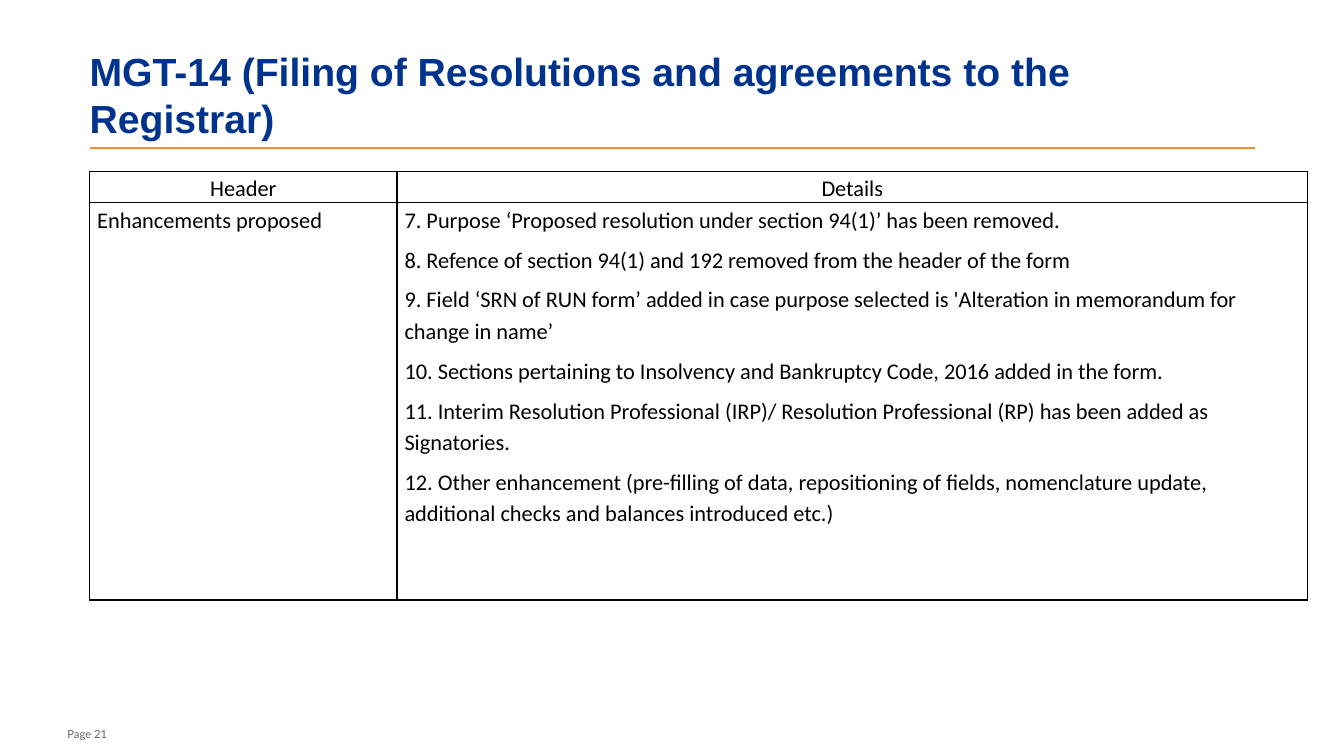
from lxml.etree import SubElement
from pptx import Presentation
from pptx.dml.color import RGBColor
from pptx.enum.shapes import MSO_CONNECTOR
from pptx.enum.text import MSO_ANCHOR, PP_ALIGN
from pptx.oxml.ns import qn
from pptx.util import Pt

COLORS = {
    "title": "00338D",
    "rule": "F68D2E",
    "text": "000000",
    "border": "000000",
    "page": "646464",
}

TITLE_FONT = {"name": "Arial", "size": Pt(28), "bold": True}
TABLE_FONT = {"name": "Calibri", "size": Pt(16), "bold": False}
PAGE_FONT = {"name": "Lato", "size": Pt(8), "bold": False}

LEFT = 64.1
COLUMN_WIDTHS = (219.6, 650.9)
ROW_HEIGHTS = (22.4, 283.8)

TABLE_ROWS = (
    (["Header"], ["Details"]),
    (
        ["Enhancements proposed"],
        [
            "7. Purpose ‘Proposed resolution under section 94(1)’ has been removed.",
            "8. Refence of section 94(1) and 192 removed from the header of the form",
            "9. Field ‘SRN of RUN form’ added in case purpose selected is "
            "'Alteration in memorandum for change in name’",
            "10. Sections pertaining to Insolvency and Bankruptcy Code, 2016 added in the form.",
            "11. Interim Resolution Professional (IRP)/ Resolution Professional (RP) "
            "has been added as Signatories.",
            "12. Other enhancement (pre-filling of data, repositioning of fields, "
            "nomenclature update, additional checks and balances introduced etc.)",
        ],
    ),
)


def apply_format(target, values):
    for name, value in values.items():
        setattr(target, name, value)


def format_font(font, values, color):
    apply_format(font, values)
    font.color.rgb = RGBColor.from_string(COLORS[color])


def add_label(slide, text, box, anchor, font_values, color):
    """Add a text box without margins; box is left, top, width, height in points."""
    label = slide.shapes.add_textbox(*map(Pt, box))
    frame = label.text_frame
    apply_format(frame, {
        "word_wrap": True,
        "vertical_anchor": anchor,
        "margin_left": 0,
        "margin_right": 0,
        "margin_top": 0,
        "margin_bottom": 0,
    })
    paragraph = frame.paragraphs[0]
    paragraph.text = text
    format_font(paragraph.font, font_values, color)


def add_title_rule(slide):
    rule = slide.shapes.add_connector(
        MSO_CONNECTOR.STRAIGHT, Pt(LEFT), Pt(105.8), Pt(897.1), Pt(105.8))
    rule.line.width = Pt(1)
    rule.line.color.rgb = RGBColor.from_string(COLORS["rule"])
    SubElement(rule._element.spPr, qn("a:effectLst"))


def add_borders(cell):
    properties = cell._tc.get_or_add_tcPr()
    for side in ("lnL", "lnR", "lnT", "lnB"):
        line = SubElement(properties, qn(f"a:{side}"), w=str(Pt(1)))
        fill = SubElement(line, qn("a:solidFill"))
        SubElement(fill, qn("a:srgbClr"), val=COLORS["border"])


def fill_cell(cell, texts, alignment):
    apply_format(cell, {
        "margin_left": Pt(5.4),
        "margin_right": Pt(5.4),
        "margin_top": 0,
        "margin_bottom": 0,
    })
    add_borders(cell)
    cell.fill.background()
    frame = cell.text_frame
    for index, text in enumerate(texts):
        paragraph = frame.add_paragraph() if index else frame.paragraphs[0]
        paragraph.text = text
        apply_format(paragraph, {
            "alignment": alignment,
            "line_spacing": 1.15,
            "space_before": Pt(6 if index else 0),
        })
        format_font(paragraph.font, TABLE_FONT, "text")


def add_details_table(slide):
    table = slide.shapes.add_table(
        len(ROW_HEIGHTS), len(COLUMN_WIDTHS), Pt(LEFT), Pt(122.4),
        Pt(sum(COLUMN_WIDTHS)), Pt(sum(ROW_HEIGHTS))).table
    apply_format(table, {"first_row": False, "horz_banding": False})
    for column, width in zip(table.columns, COLUMN_WIDTHS):
        column.width = Pt(width)
    for row_index, (row, height) in enumerate(zip(table.rows, ROW_HEIGHTS)):
        row.height = Pt(height)
        alignment = PP_ALIGN.LEFT if row_index else PP_ALIGN.CENTER
        for cell, texts in zip(row.cells, TABLE_ROWS[row_index]):
            fill_cell(cell, texts, alignment)


def main():
    presentation = Presentation()
    apply_format(presentation, {"slide_width": Pt(960.5), "slide_height": Pt(540)})
    slide = presentation.slides.add_slide(presentation.slide_layouts[6])
    add_label(slide, "Page 21", (48.2, 513.4, 69.8, 15.8),
              MSO_ANCHOR.BOTTOM, PAGE_FONT, "page")
    add_title_rule(slide)
    add_label(slide, "MGT-14 (Filing of Resolutions and agreements to the Registrar)",
              (LEFT, 28.8, 830.9, 77), MSO_ANCHOR.MIDDLE, TITLE_FONT, "title")
    add_details_table(slide)
    presentation.save("out.pptx")


if __name__ == "__main__":
    main()
